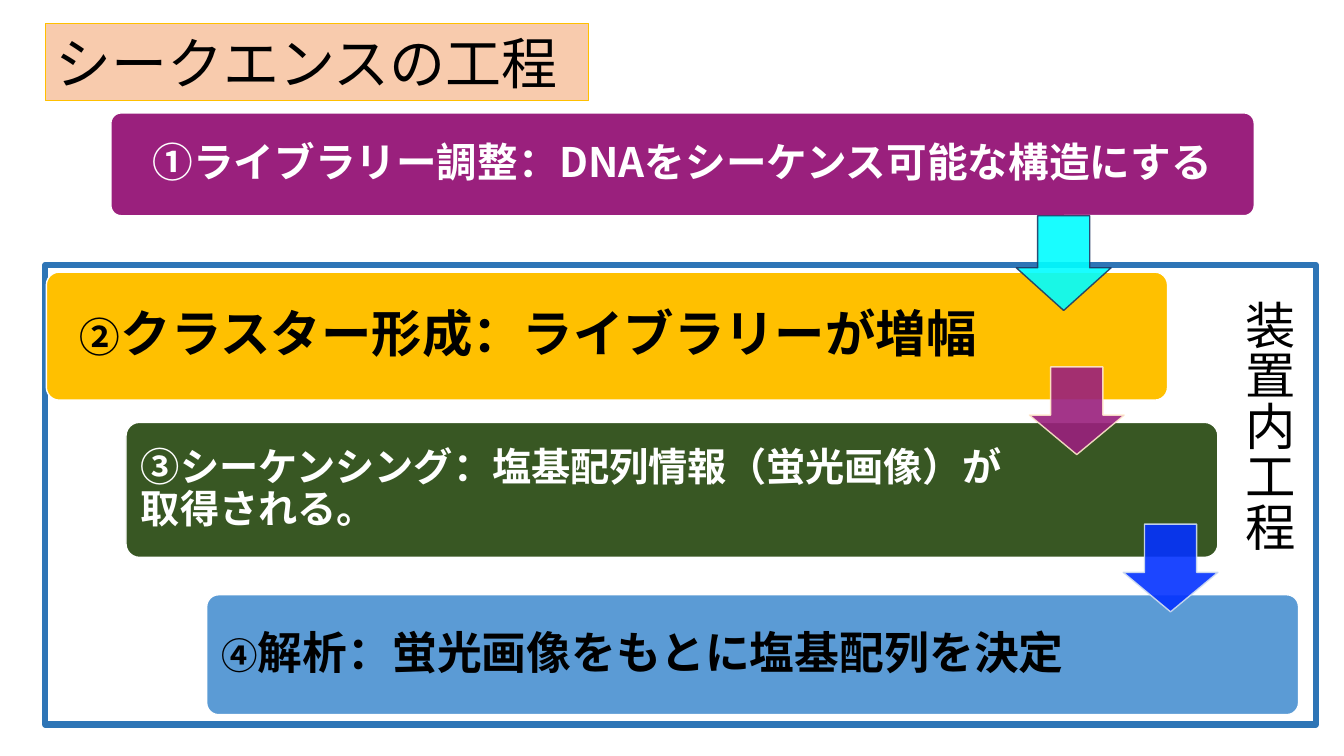
from lxml import etree
from pptx import Presentation
from pptx import util as u
from pptx.dml.color import RGBColor
from pptx.enum import shapes, text
from pptx.oxml.ns import qn

COLOURS = {
    "black": "000000", "white": "FFFFFF", "peach": "F8CBAD", "amber": "FFC000",
    "purple": "9A207D", "green": "385723", "sky": "5B9BD5", "frame": "2E75B6",
    "cyan": "00FDFF", "navy": "203864", "cream": "FFE8CC", "blue": "0432FF",
    "mist": "D2DFF0",
}
LEFT, CENTRE = text.PP_ALIGN.LEFT, text.PP_ALIGN.CENTER
SHAPE = shapes.MSO_SHAPE


def px(length):
    """Turn px, 100 to the inch, into EMU."""
    return u.Emu(length * 9144)


class FlowSlide:
    font = "Noto Sans CJK JP"

    def __init__(self, deck):
        self.shapes = deck.slides.add_slide(deck.slide_layouts[6]).shapes

    def set_text(self, frame, runs, colour="black", bold=False, align=LEFT,
                 anchor=text.MSO_ANCHOR.TOP, insets=(10, 5, 10, 5), spacing=1.0):
        """Fill a text frame with one paragraph of (wording, points) runs."""
        frame.word_wrap = True
        frame.vertical_anchor = anchor
        (frame.margin_left, frame.margin_top,
         frame.margin_right, frame.margin_bottom) = map(px, insets)
        paragraph = frame.paragraphs[0]
        paragraph.alignment = align
        paragraph.line_spacing = spacing
        for wording, points in runs:
            run = paragraph.add_run()
            run.text = wording
            run.font.size = u.Pt(points)
            run.font.bold = bold
            run.font.color.rgb = RGBColor.from_string(COLOURS[colour])
            run.font.name = self.font
            east_asian = etree.SubElement(run.font._element, qn("a:ea"))
            east_asian.set("typeface", self.font)

    def block(self, kind, box, fill, line, width=1.0, adjust=()):
        block = self.shapes.add_shape(kind, *map(px, box))
        block.shadow.inherit = False
        for index, value in enumerate(adjust):
            block.adjustments[index] = value
        if fill:
            block.fill.solid()
            block.fill.fore_color.rgb = RGBColor.from_string(COLOURS[fill])
        else:
            block.fill.background()
        block.line.color.rgb = RGBColor.from_string(COLOURS[line])
        block.line.width = u.Pt(width)
        return block

    def title(self, box, wording):
        panel = self.block(SHAPE.RECTANGLE, box, "peach", "amber", 0.75)
        self.set_text(panel.text_frame, [(wording, 40)])

    def step(self, box, fill, runs, colour, insets, align=LEFT):
        bar = self.block(SHAPE.ROUNDED_RECTANGLE, box, fill, "white", adjust=[0.1])
        self.set_text(bar.text_frame, runs, colour, bold=True, align=align,
                      anchor=text.MSO_ANCHOR.MIDDLE, insets=insets, spacing=0.9)

    def arrow(self, left, top, height, fill, line):
        """Draw a down arrow whose fill and line are 90 % opaque."""
        arrow = self.block(SHAPE.DOWN_ARROW, (left, top, 94, height), fill, line,
                           adjust=[0.55, 0.45])
        for colour in arrow._element.spPr.iter(qn("a:srgbClr")):
            etree.SubElement(colour, qn("a:alpha")).set("val", "90000")

    def vertical_label(self, box, wording):
        label = self.shapes.add_textbox(*map(px, box)).text_frame
        self.set_text(label, [(wording, 36)])
        label._txBody.bodyPr.set("vert", "eaVert")


def main():
    deck = Presentation()
    deck.slide_width, deck.slide_height = u.Inches(13.33), u.Inches(7.5)
    slide = FlowSlide(deck)

    slide.block(SHAPE.RECTANGLE, (45, 263, 1260, 456), None, "frame", 4.5)
    slide.step((110, 112, 1134, 102), "purple",
               [("①ライブラリー調整：DNAをシーケンス可能な構造にする", 29)],
               "white", (20, 12, 20, 12), CENTRE)
    slide.step((46, 270, 1112, 127), "amber",
               [("②", 29), ("クラスター形成：ライブラリーが増幅", 36)],
               "black", (12, 12, 168, 12), CENTRE)
    slide.step((125, 419, 1083, 134), "green",
               [("③シーケンシング：塩基配列情報（蛍光画像）が取得される。", 28)],
               "white", (11, 11, 198, 11))
    slide.step((205, 590, 1083, 119), "sky",
               [("④", 26), ("解析：蛍光画像をもとに塩基配列を決定", 32)],
               "black", (11, 11, 198, 11))

    slide.arrow(1021, 364, 87, "purple", "cream")
    slide.arrow(1114, 520, 87, "blue", "mist")
    slide.arrow(1008, 214, 94, "cyan", "navy")

    slide.title((45, 23, 539, 77), "シークエンスの工程")
    slide.vertical_label((1212, 288, 81, 280), "装置内工程")
    deck.save("out.pptx")


if __name__ == "__main__":
    main()
